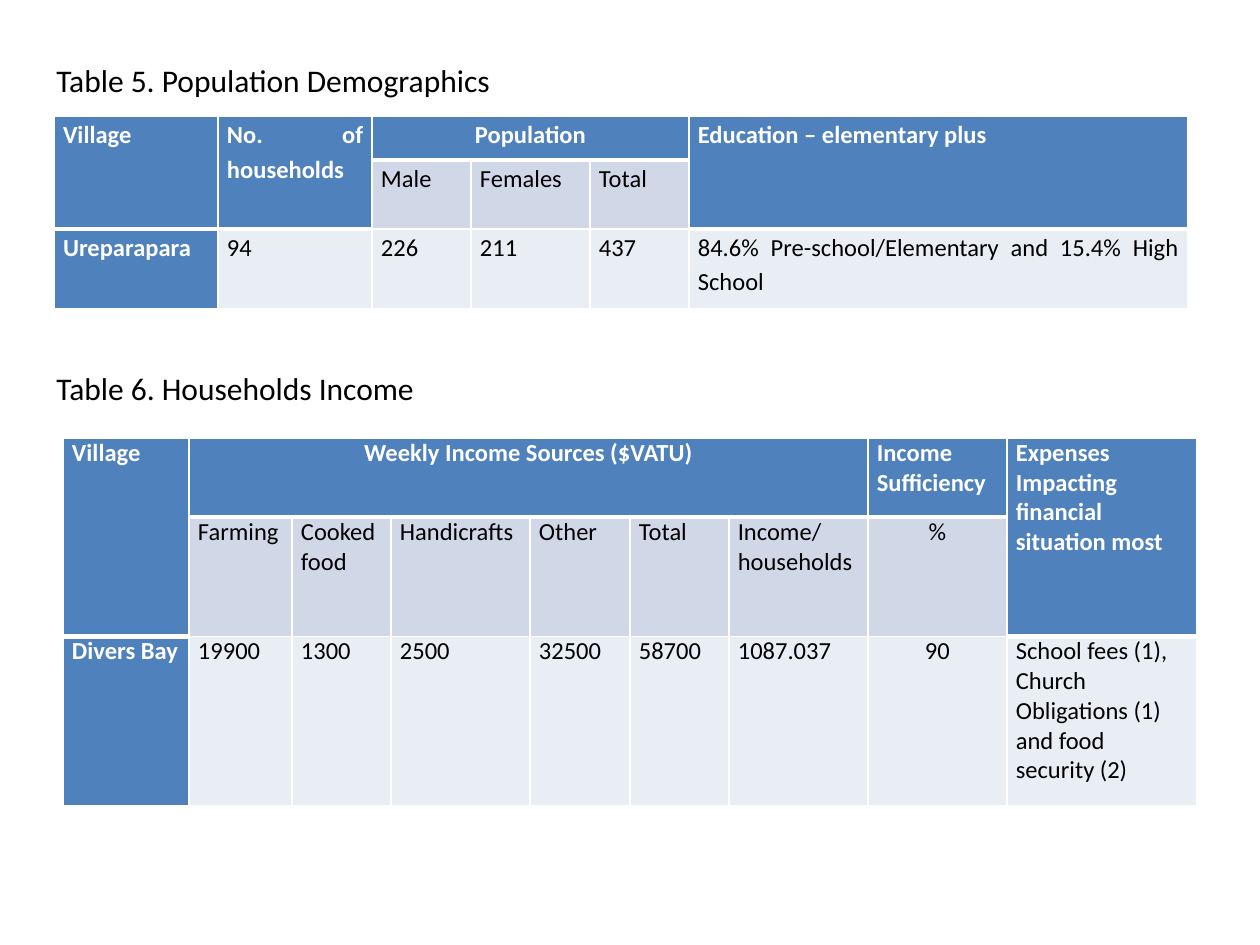
from dataclasses import dataclass

from lxml.etree import SubElement
from pptx import Presentation
from pptx.dml.color import RGBColor
from pptx.enum.text import MSO_AUTO_SIZE, PP_ALIGN
from pptx.oxml.ns import qn
from pptx.util import Pt

EMU_PER_PX = 914400 / 126


@dataclass(frozen=True)
class Theme:
    font: str = "Calibri"
    title_size: int = 18
    cell_size: int = 14
    text: str = "000000"
    header_text: str = "FFFFFF"
    header_fill: str = "4F81BD"
    subheader_fill: str = "D0D8E8"
    body_fill: str = "E9EDF4"
    border: str = "FFFFFF"
    thin: int = 1
    thick: int = 3


THEME = Theme()


def px(length):
    return round(length * EMU_PER_PX)


def style_font(font, size, color, bold=False):
    font.name = THEME.font
    font.size = Pt(size)
    font.bold = bold
    font.color.rgb = RGBColor.from_string(color)


def add_title(slide, text, left, top, width, height, wrap):
    box = slide.shapes.add_textbox(px(left), px(top), px(width), px(height))
    frame = box.text_frame
    frame.word_wrap = wrap
    frame.auto_size = MSO_AUTO_SIZE.SHAPE_TO_FIT_TEXT
    frame.text = text
    style_font(frame.paragraphs[0].font, THEME.title_size, THEME.text)


def set_borders(cell, top, bottom):
    """Draw all four cell edges; top and bottom are widths in points."""
    properties = cell._tc.get_or_add_tcPr()
    widths = {"a:lnL": THEME.thin, "a:lnR": THEME.thin, "a:lnT": top, "a:lnB": bottom}
    for tag, width in widths.items():
        line = SubElement(properties, qn(tag), w=str(Pt(width)))
        fill = SubElement(line, qn("a:solidFill"))
        SubElement(fill, qn("a:srgbClr"), val=THEME.border)


def style_cell(cell, text, fill, bold, alignment, line_spacing):
    cell.fill.solid()
    cell.fill.fore_color.rgb = RGBColor.from_string(fill)
    cell.margin_left = cell.margin_right = px(9)
    cell.margin_top = cell.margin_bottom = 0
    cell.text = text
    paragraph = cell.text_frame.paragraphs[0]
    paragraph.alignment = alignment
    paragraph.line_spacing = line_spacing
    color = THEME.header_text if bold else THEME.text
    style_font(paragraph.font, THEME.cell_size, color, bold)


def add_data_table(slide, left, top, widths, heights, rows, merges, alignments, line_spacing):
    """Add a table whose merges map a first cell to its last cell.

    Cells without an entry in alignments are justified.
    """
    table = slide.shapes.add_table(
        len(heights), len(widths), px(left), px(top), px(sum(widths)), px(sum(heights))
    ).table
    table.first_row = table.horz_banding = False
    for column, width in zip(table.columns, widths):
        column.width = px(width)
    for row, height in zip(table.rows, heights):
        row.height = px(height)

    for r, texts in enumerate(rows):
        for c, text in enumerate(texts):
            header_end = merges.get((0, c), (0, c))[0]
            is_header = r <= header_end
            is_label = is_header or c == 0
            if is_label:
                fill = THEME.header_fill
            else:
                fill = THEME.subheader_fill if r == 1 else THEME.body_fill
            cell = table.cell(r, c)
            set_borders(
                cell,
                top=THEME.thick if r == header_end + 1 else THEME.thin,
                bottom=THEME.thick if is_header else THEME.thin,
            )
            alignment = alignments.get((r, c), PP_ALIGN.JUSTIFY)
            style_cell(cell, text, fill, is_label, alignment, line_spacing)

    for first, last in merges.items():
        table.cell(*first).merge(table.cell(*last))


def add_population_table(slide):
    add_data_table(
        slide, 54, 116,
        widths=[164, 154, 99, 119, 99, 499],
        heights=[44, 69, 80],
        rows=[
            ["Village", "No. of households", "Population", "", "", "Education – elementary plus"],
            ["", "", "Male", "Females", "Total", ""],
            ["Ureparapara", "94", "226", "211", "437",
             "84.6% Pre-school/Elementary and 15.4% High School"],
        ],
        merges={(0, 0): (1, 0), (0, 1): (1, 1), (0, 2): (0, 4), (0, 5): (1, 5)},
        alignments={(0, 2): PP_ALIGN.CENTER, (1, 4): PP_ALIGN.LEFT},
        line_spacing=1.15,
    )


def add_income_table(slide):
    add_data_table(
        slide, 63, 438,
        widths=[126, 103, 99, 139, 100, 99, 139, 139, 190],
        heights=[79, 119, 169],
        rows=[
            ["Village", "Weekly Income Sources ($VATU)", "", "", "", "", "",
             "Income Sufficiency", "Expenses Impacting financial situation most"],
            ["", "Farming", "Cooked food", "Handicrafts", "Other", "Total",
             "Income/ households", "%", ""],
            ["Divers Bay", "19900", "1300", "2500", "32500", "58700", "1087.037", "90",
             "School fees (1), Church Obligations (1) and food security (2)"],
        ],
        merges={(0, 0): (1, 0), (0, 1): (0, 6), (0, 8): (1, 8)},
        alignments={
            (0, 1): PP_ALIGN.CENTER, (1, 7): PP_ALIGN.CENTER, (2, 7): PP_ALIGN.CENTER,
            (0, 8): PP_ALIGN.LEFT, (2, 8): PP_ALIGN.LEFT,
        },
        line_spacing=1.0,
    )


def main():
    presentation = Presentation()
    presentation.slide_width = px(1260)
    presentation.slide_height = px(945)
    slide = presentation.slides.add_slide(presentation.slide_layouts[6])
    add_population_table(slide)
    add_income_table(slide)
    add_title(slide, "Table 5. Population Demographics", 44, 55, 465, 50, wrap=False)
    add_title(slide, "Table 6. Households Income", 44, 363, 433, 50, wrap=True)
    presentation.save("out.pptx")


if __name__ == "__main__":
    main()
